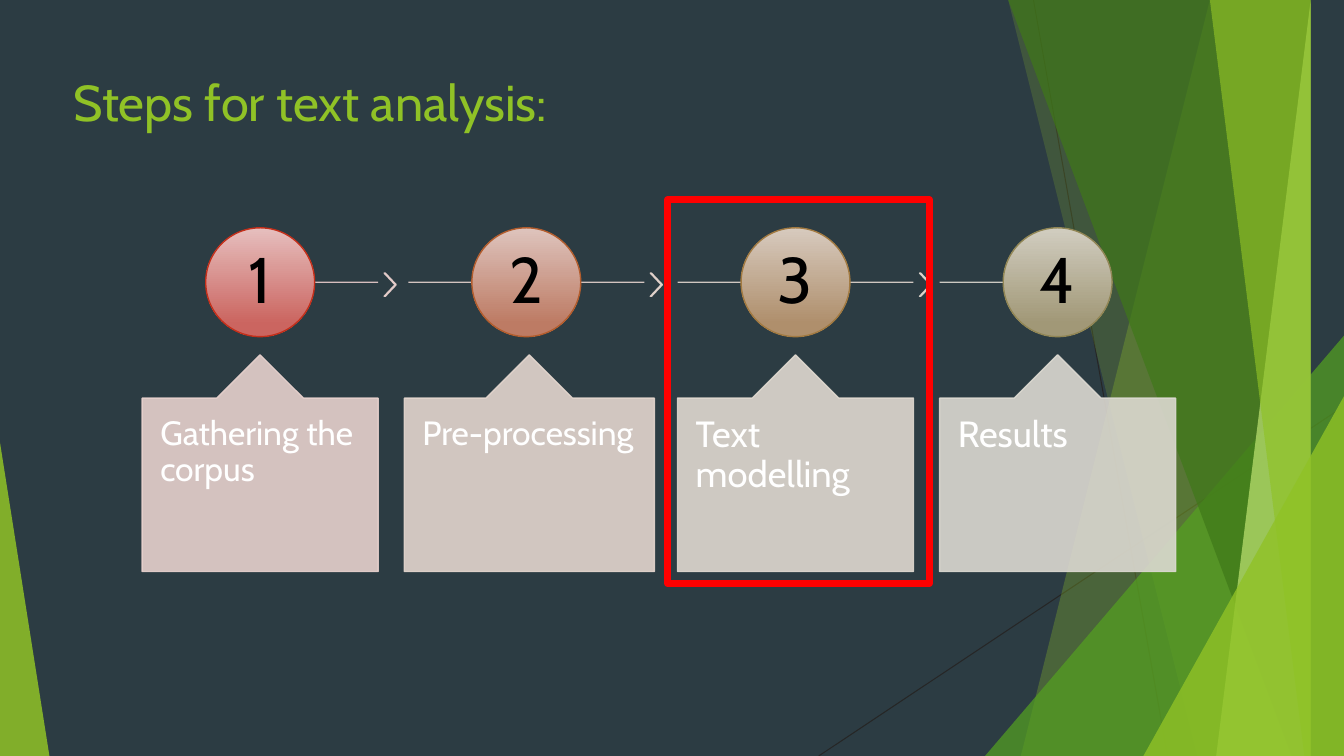
from lxml import etree
from pptx import Presentation, util as u
from pptx.dml.color import RGBColor
from pptx.enum import shapes, text
from pptx.oxml.ns import qn

# The slide grid has square cells, 13.33 columns by 7.5 rows
CELL = u.Inches(1)
COLS, ROWS = 13.33, 7.5
FONT = "Cabin"
COLORS = {
    "night": "2C3C43", "hairline": "262626", "lime": "90C226", "green": "54A021",
    "forest": "3F7819", "pale": "C0E474", "red": "FF0000",
    "white": "FFFFFF", "black": "000000",
}
# Number, label, label size, disc centre, card left, card width,
# then colours: rail, chevron, disc top, disc bottom, disc edge, card
STEPS = [
    ("1", "Gathering the corpus", 24, 2.58, 1.41, 2.34,
     "EACDCD", "E9D0CD", "E6BFBE", "CB6560", "C42F1A", "E7D1CD"),
    ("2", "Pre-processing", 24, 5.22, 4.01, 2.48,
     "E6D3CE", "E5D5CE", "DEC4BD", "BD7B64", "B35D2D", "E4D6CE"),
    ("3", "Text modelling", 26, 7.89, 6.72, 2.34,
     "E2D7CF", "E1D8CF", "D7CABE", "AF8F6C", "A27A41", "E0D9D0"),
    ("4", "Results", 26, 10.49, 9.32, 2.34,
     "DED9D0", None, "D1CDC0", "A19877", "918655", "DCD9D1"),
]


def cells(*counts):
    return [int(count * CELL) for count in counts]


def rgb(color):
    return RGBColor.from_string(COLORS.get(color, color))


def set_alpha(shape, percent):
    for color in list(shape._element.spPr.iter(qn("a:srgbClr"))):
        etree.SubElement(color, qn("a:alpha"), val=str(percent * 1000))


def paint(shape, fill=None, edge=None, width=1, alpha=100):
    shape.shadow.inherit = False
    if fill:
        shape.fill.solid()
        shape.fill.fore_color.rgb = rgb(fill)
    else:
        shape.fill.background()
    if edge:
        shape.line.color.rgb = rgb(edge)
        shape.line.width = u.Pt(width)
    else:
        shape.line.fill.background()
    if alpha < 100:
        set_alpha(shape, alpha)


def add_preset(page, kind, box, adjust=()):
    shape = page.shapes.add_shape(kind, *cells(*box))
    for index, value in enumerate(adjust):
        shape.adjustments[index] = value
    return shape


def add_line(page, ends, color, width, alpha=100):
    line = page.shapes.add_connector(shapes.MSO_CONNECTOR.STRAIGHT, *cells(*ends))
    line.line.color.rgb = rgb(color)
    line.line.width = u.Pt(width)
    if alpha < 100:
        set_alpha(line, alpha)
    etree.SubElement(line._element.spPr, qn("a:effectLst"))


def write(shape, words, size, color, insets, anchor="TOP", align="LEFT", spacing=1):
    frame = shape.text_frame
    side, top = cells(*insets)
    frame_format = {
        "word_wrap": True, "vertical_anchor": text.MSO_ANCHOR[anchor],
        "margin_left": side, "margin_right": side,
        "margin_top": top, "margin_bottom": top,
    }
    for name, value in frame_format.items():
        setattr(frame, name, value)
    para = frame.paragraphs[0]
    para.alignment = text.PP_ALIGN[align]
    para.line_spacing = spacing
    span = para.add_run()
    span.text = words
    for name, value in {"name": FONT, "size": u.Pt(size)}.items():
        setattr(span.font, name, value)
    span.font.color.rgb = rgb(color)


def add_band(page, top_x, bottom_x, color, alpha):
    """Fill from a slanted left edge to the right side of the slide."""
    builder = page.shapes.build_freeform(top_x, 0, scale=CELL)
    builder.add_line_segments([(COLS, 0), (COLS, ROWS), (bottom_x, ROWS)])
    paint(builder.convert_to_shape(), color, alpha=alpha)


def add_corner(page, left, top, width, apex, color, alpha):
    """Stand a right triangle on the bottom of the slide."""
    box = (left, top, width, ROWS - top)
    corner = add_preset(page, shapes.MSO_SHAPE.ISOSCELES_TRIANGLE, box, [apex])
    paint(corner, color, alpha=alpha)


def draw_backdrop(page):
    page.background.fill.solid()
    page.background.fill.fore_color.rgb = rgb("night")
    for ends in [(10.25, 0, 11.58, ROWS), (COLS, 4.03, 8.12, ROWS)]:
        add_line(page, ends, "hairline", 0.75)
    add_band(page, 12.28, 10.04, "lime", 30)
    add_band(page, 10.5, 11.83, "lime", 20)
    add_corner(page, 9.77, 3.33, 3.56, 1, "green", 72)
    add_band(page, 10.21, 12.91, "forest", 70)
    add_band(page, 13.03, 11.92, "pale", 70)
    add_band(page, 11.96, 13.18, "lime", 65)
    add_corner(page, 11.34, 3.93, 1.99, 1, "lime", 80)
    add_corner(page, 0, 4.39, 0.49, 0, "lime", 85)


def draw_step(page, top, step):
    (number, label, size, hub, left, width,
     rail, chevron, disc_top, disc_bottom, disc_edge, card_color) = step
    reach, disc_size = 1.17, 1.08
    middle = top + disc_size / 2

    # Rail through the disc, open at both ends of the row
    start = hub if number == STEPS[0][0] else hub - reach
    end = hub + reach if chevron else hub
    add_line(page, (start, middle, end, middle), rail, 1, 90)
    if chevron:
        box = (end + 0.06, middle - 0.09, 0.12, 0.23)
        arrow = add_preset(page, shapes.MSO_SHAPE.CHEVRON, box, [0.9])
        paint(arrow, chevron, chevron, alpha=90)

    # Numbered disc
    box = (hub - disc_size / 2, top, disc_size, disc_size)
    disc = add_preset(page, shapes.MSO_SHAPE.OVAL, box)
    paint(disc, edge=disc_edge)
    disc.fill.gradient()
    disc.fill.gradient_angle = 270
    for stop, color, place in zip(disc.fill.gradient_stops,
                                  (disc_top, disc_bottom), (0, 0.88)):
        stop.color.rgb = rgb(color)
        stop.position = place
    write(disc, number, 46, "black", (0.04, 0.04), "MIDDLE", "CENTER", 0.9)

    # Card pointing up at the disc
    card = add_preset(page, shapes.MSO_SHAPE.UP_ARROW_CALLOUT,
                      (left, top + 1.26, width, 2.15), (0.5, 0.2, 0.2, 0.8))
    paint(card, card_color, card_color, alpha=90)
    write(card, label, size, "white", (0.18, 0.18), spacing=0.9)


def draw_highlight(page, box):
    frame = add_preset(page, shapes.MSO_SHAPE.RECTANGLE, box)
    paint(frame, edge="red", width=4.5)


def draw_title(page, box):
    title = page.shapes.add_textbox(*cells(*box))
    write(title, "Steps for text analysis:", 36, "lime", (0.1, 0.05))


def main():
    deck = Presentation()
    deck.slide_width, deck.slide_height = cells(COLS, ROWS)
    page = deck.slides.add_slide(deck.slide_layouts[6])
    draw_backdrop(page)
    for step in STEPS:
        draw_step(page, 2.26, step)
    draw_highlight(page, (6.62, 1.98, 2.6, 3.81))
    draw_title(page, (0.63, 0.66, 11.5, 0.9))
    deck.save("out.pptx")


if __name__ == "__main__":
    main()
